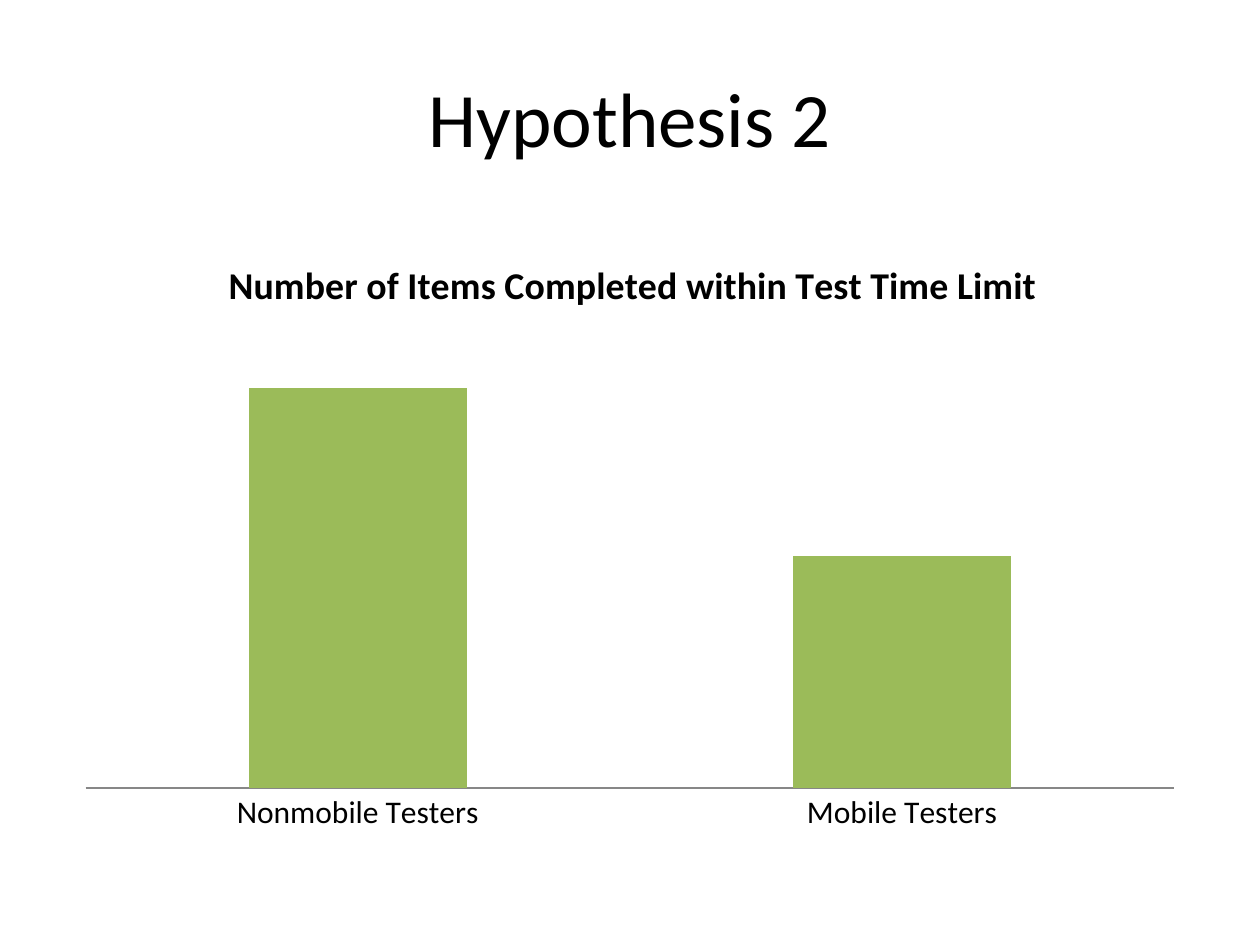
from dataclasses import dataclass

from lxml.etree import SubElement
from pptx import Presentation
from pptx.chart.data import CategoryChartData
from pptx.dml.color import RGBColor
from pptx.enum.chart import XL_CHART_TYPE, XL_TICK_MARK
from pptx.enum.text import MSO_ANCHOR, PP_ALIGN
from pptx.oxml import parse_xml
from pptx.oxml.ns import nsdecls, qn
from pptx.util import Inches, Pt


@dataclass(frozen=True)
class Theme:
    """Colours, font and type sizes of the slide."""

    font: str = "Calibri"
    text: RGBColor = RGBColor(0x00, 0x00, 0x00)
    bar: RGBColor = RGBColor(0x9B, 0xBB, 0x59)
    axis: RGBColor = RGBColor(0x87, 0x87, 0x87)
    heading_size: float = 44
    chart_title_size: float = 21.6
    label_size: float = 18


THEME = Theme()


def format_font(font, size, bold=False):
    """Apply the theme's typeface and colour at the given size."""
    for attribute, setting in {"name": THEME.font, "size": Pt(size), "bold": bold}.items():
        setattr(font, attribute, setting)
    font.color.rgb = THEME.text


def set_layout(parent, index, **fractions):
    """Place a chart part by fractions of the chart area."""
    for previous in parent.findall(qn("c:layout")):
        parent.remove(previous)
    layout = parse_xml(f"<c:layout {nsdecls('c')}><c:manualLayout/></c:layout>")
    settings = {"xMode": "edge", "yMode": "edge", **fractions}
    if "w" in fractions:
        settings = {"layoutTarget": "inner", **settings}
    for tag, setting in settings.items():
        SubElement(layout[0], qn(f"c:{tag}")).set("val", str(setting))
    parent.insert(index, layout)


def add_heading(slide, wording):
    """Fill and place the title placeholder."""
    heading = slide.shapes.title
    placement = {"left": 0.5, "top": 0.3, "width": 9, "height": 1.25}
    for attribute, length in placement.items():
        setattr(heading, attribute, Inches(length))
    heading.text_frame.text = wording
    heading.text_frame.vertical_anchor = MSO_ANCHOR.MIDDLE
    paragraph = heading.text_frame.paragraphs[0]
    paragraph.alignment = PP_ALIGN.CENTER
    format_font(paragraph.runs[0].font, THEME.heading_size)


def format_axes(chart):
    """Show the category baseline and hide the value axis."""
    categories, counts = chart.category_axis, chart.value_axis
    for attribute in ("major_tick_mark", "minor_tick_mark"):
        setattr(categories, attribute, XL_TICK_MARK.NONE)
    categories.format.line.color.rgb = THEME.axis
    categories.format.line.width = Pt(0.75)
    format_font(categories.tick_labels.font, THEME.label_size)
    limits = {
        "visible": False,
        "has_major_gridlines": False,
        "minimum_scale": 0,
        "maximum_scale": 120,
    }
    for attribute, setting in limits.items():
        setattr(counts, attribute, setting)


def add_items_chart(slide, title, items_completed):
    """Add the column chart comparing the groups of testers."""
    chart_data = CategoryChartData()
    chart_data.categories = list(items_completed)
    chart_data.add_series("Series 1", list(items_completed.values()))
    chart = slide.shapes.add_chart(
        XL_CHART_TYPE.COLUMN_CLUSTERED,
        Inches(0.5), Inches(1.75), Inches(9), Inches(4.95), chart_data,
    ).chart
    chart.has_legend = False
    format_font(chart.font, THEME.label_size)

    chart.chart_title.text_frame.text = title
    title_run = chart.chart_title.text_frame.paragraphs[0].runs[0]
    format_font(title_run.font, THEME.chart_title_size, bold=True)
    chart.chart_title.include_in_layout = False

    plot = chart.plots[0]
    plot.gap_width = 150
    plot.vary_by_categories = False
    bar_fill = plot.series[0].format.fill
    bar_fill.solid()
    bar_fill.fore_color.rgb = THEME.bar
    format_axes(chart)

    chart_element = chart.element.find(qn("c:chart"))
    set_layout(chart_element.find(qn("c:title")), 1, x=0.14, y=0.05)
    set_layout(chart_element.find(qn("c:plotArea")), 0, x=0.02, y=0.14, w=0.96, h=0.77)


def main():
    """Build and save the slide."""
    presentation = Presentation()
    presentation.slide_width, presentation.slide_height = Inches(10), Inches(7.5)
    slide = presentation.slides.add_slide(presentation.slide_layouts[5])
    add_heading(slide, "Hypothesis 2")
    add_items_chart(
        slide,
        "Number of Items Completed within Test Time Limit",
        {"Nonmobile Testers": 100, "Mobile Testers": 58},
    )
    presentation.save("out.pptx")


if __name__ == "__main__":
    main()
